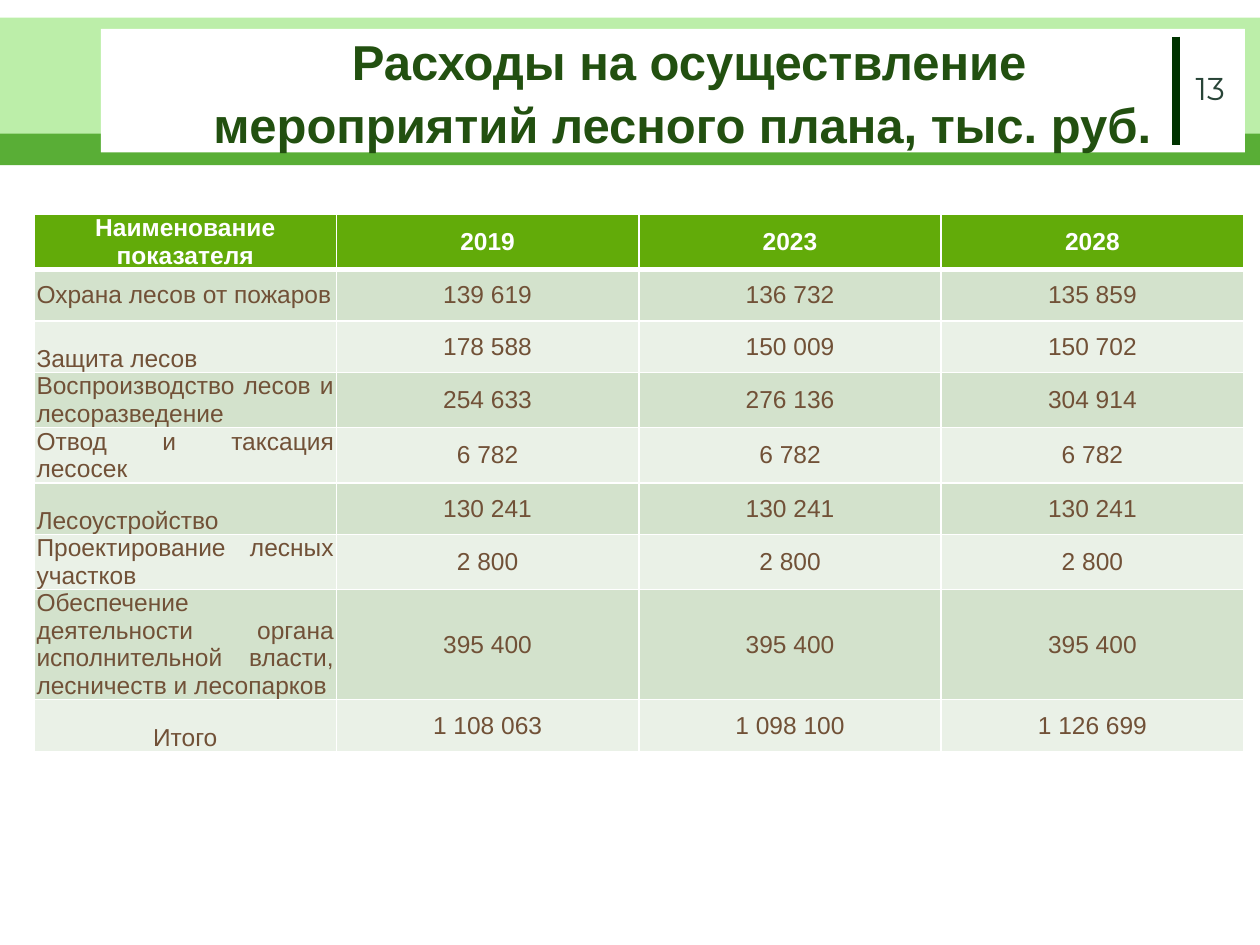
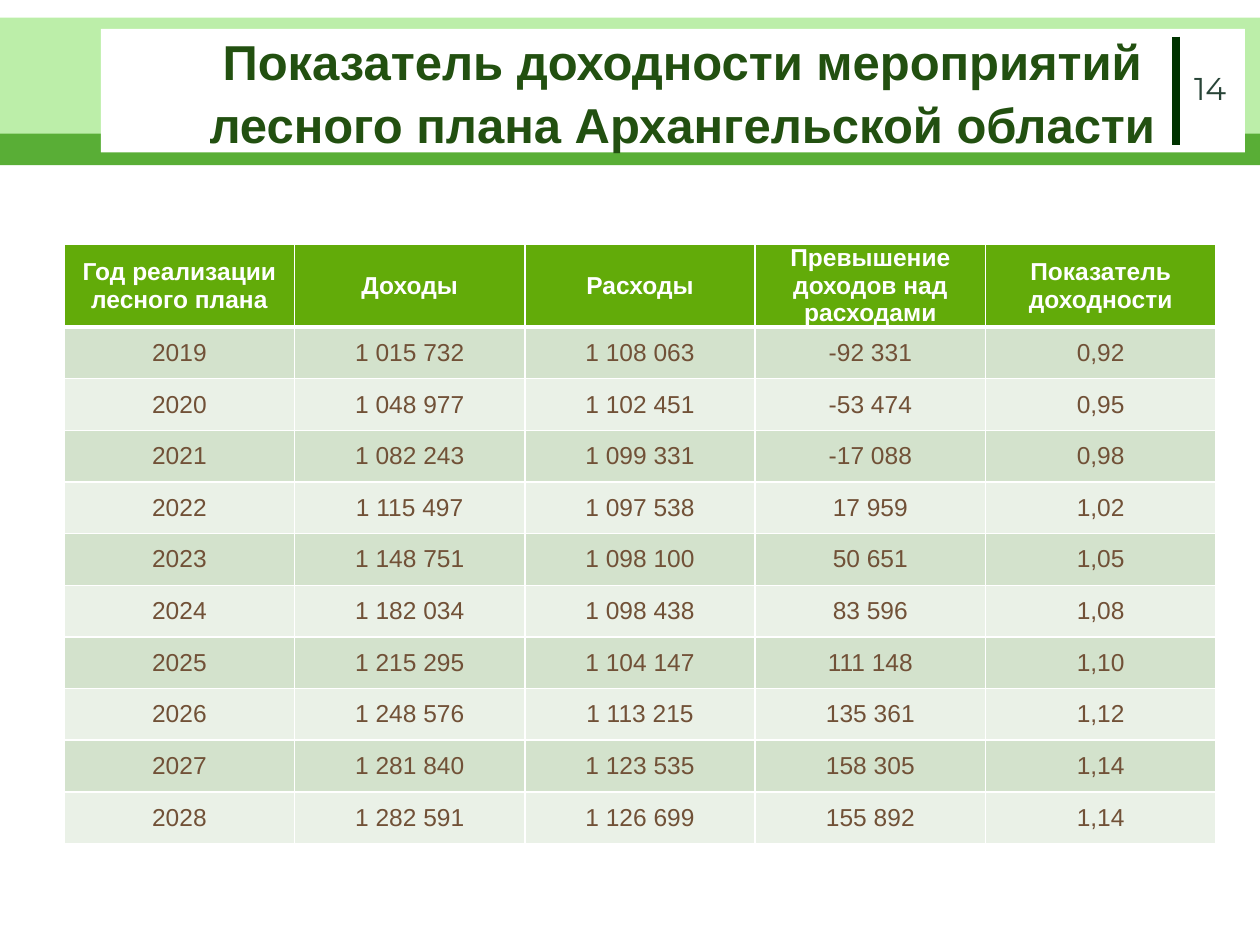
import pptx
import pptx.util
import pptx.dml.color
import pptx.enum.shapes
import pptx.enum.text
import pptx.oxml
import pptx.oxml.ns
import lxml.etree

Inches = pptx.util.Inches
Pt = pptx.util.Pt
RGBColor = pptx.dml.color.RGBColor
ALIGN = pptx.enum.text.PP_ALIGN
ANCHOR = pptx.enum.text.MSO_ANCHOR
qn = pptx.oxml.ns.qn

WHITE = RGBColor(0xFF, 0xFF, 0xFF)
BAND_DARK = RGBColor(0x47, 0xA6, 0x21)
BAND_LIGHT = RGBColor(0xBC, 0xEE, 0xA9)
DIVIDER = RGBColor(0x00, 0x33, 0x00)
TITLE_GREEN = RGBColor(0x22, 0x50, 0x10)
NUMBER_GREEN = RGBColor(0x28, 0x44, 0x37)
HEADER_GREEN = RGBColor(0x62, 0xAB, 0x09)
ROW_DARK = RGBColor(0xD3, 0xE2, 0xCC)
ROW_LIGHT = RGBColor(0xEA, 0xF1, 0xE7)
BROWN = RGBColor(0x71, 0x51, 0x37)

ROW_HEIGHT = 0.41

expenses = [
    ["Наименование показателя", "2019", "2023", "2028"],
    ["Охрана лесов от пожаров", "139 619", "136 732", "135 859"],
    ["Защита лесов", "178 588", "150 009", "150 702"],
    ["Воспроизводство лесов и лесоразведение", "254 633", "276 136", "304 914"],
    ["Отвод и таксация лесосек", "6 782", "6 782", "6 782"],
    ["Лесоустройство", "130 241", "130 241", "130 241"],
    ["Проектирование лесных участков", "2 800", "2 800", "2 800"],
    ["Обеспечение деятельности органа исполнительной власти, лесничеств и лесопарков",
     "395 400", "395 400", "395 400"],
    ["Итого", "1 108 063", "1 098 100", "1 126 699"],
]
profitability = [
    ["Год реализации\vлесного плана", "Доходы", "Расходы",
     "Превышение доходов над расходами", "Показатель\vдоходности"],
    ["2019", "1 015 732", "1 108 063", "-92 331", "0,92"],
    ["2020", "1 048 977", "1 102 451", "-53 474", "0,95"],
    ["2021", "1 082 243", "1 099 331", "-17 088", "0,98"],
    ["2022", "1 115 497", "1 097 538", "17 959", "1,02"],
    ["2023", "1 148 751", "1 098 100", "50 651", "1,05"],
    ["2024", "1 182 034", "1 098 438", "83 596", "1,08"],
    ["2025", "1 215 295", "1 104 147", "111 148", "1,10"],
    ["2026", "1 248 576", "1 113 215", "135 361", "1,12"],
    ["2027", "1 281 840", "1 123 535", "158 305", "1,14"],
    ["2028", "1 282 591", "1 126 699", "155 892", "1,14"],
]
slides = [
    (" Расходы на осуществление мероприятий лесного плана, тыс. руб.",
     "13", expenses, 0.27, 1.7, 9.6, 0.02),
    ("Показатель доходности мероприятий лесного плана Архангельской области",
     "14", profitability, 0.51, 1.94, 9.14, 0.07),
]


def style_text(para, font_name, size, color, bold=False, align=ALIGN.CENTER):
    para.alignment = align
    para.font.name = font_name
    para.font.size = Pt(size)
    para.font.bold = bold
    para.font.color.rgb = color


def add_border(cell, side, width):
    line = lxml.etree.SubElement(cell._tc.get_or_add_tcPr(), qn("a:" + side), w=str(Pt(width)))
    fill = lxml.etree.SubElement(line, qn("a:solidFill"))
    lxml.etree.SubElement(fill, qn("a:srgbClr"), val=str(WHITE))


deck = pptx.Presentation()
deck.slide_width = Inches(10)
deck.slide_height = Inches(7.5)
layout = deck.slide_layouts[5]
pages = [deck.slides.add_slide(layout) for slide in slides]

frame_parts = []
for left, top, width, height, color in [
    (0, 0.89, 10, 0.42, BAND_DARK),
    (0, 0.14, 10, 0.92, BAND_LIGHT),
    (0.8, 0.23, 9.08, 0.98, WHITE),
]:
    band = pages[0].shapes.add_shape(
        pptx.enum.shapes.MSO_SHAPE.RECTANGLE,
        Inches(left), Inches(top), Inches(width), Inches(height))
    band.shadow.inherit = False
    band.fill.solid()
    band.fill.fore_color.rgb = color
    band.line.fill.background()
    if color == BAND_DARK:
        tint = band.element.spPr.find(qn("a:solidFill"))[0]
        lxml.etree.SubElement(tint, qn("a:alpha"), val="90000")
    frame_parts.append(band.element)

divider = pages[0].shapes.add_connector(
    pptx.enum.shapes.MSO_CONNECTOR.STRAIGHT,
    Inches(9.33), Inches(0.29), Inches(9.33), Inches(1.15))
divider.line.color.rgb = DIVIDER
divider.line.width = Pt(4.5)
lxml.etree.SubElement(divider.element.spPr, qn("a:effectLst"))
frame_parts.append(divider.element)

for position, part in enumerate(frame_parts, start=2):
    layout.shapes.element.insert(position, part)

for page, (heading, number, rows, left, top, width, margin) in zip(pages, slides):
    title = page.shapes.title
    title.left, title.top = Inches(1.5), Inches(0.21)
    title.width, title.height = Inches(7.83), Inches(1.02)
    title.text_frame.text = heading
    title.text_frame.word_wrap = True
    title.text_frame.auto_size = pptx.enum.text.MSO_AUTO_SIZE.NONE
    title.text_frame.vertical_anchor = ANCHOR.MIDDLE
    title_para = title.text_frame.paragraphs[0]
    style_text(title_para, "Arial", 28, TITLE_GREEN, bold=True)
    title_para.line_spacing = 1.07

    table = page.shapes.add_table(
        len(rows), len(rows[0]), Inches(left), Inches(top),
        Inches(width), Inches(ROW_HEIGHT * len(rows))).table
    for row in table.rows:
        row.height = Inches(ROW_HEIGHT)

    for row_index, values in enumerate(rows):
        is_header = row_index == 0
        for column_index, value in enumerate(values):
            cell = table.cell(row_index, column_index)
            cell.text = value
            cell.margin_left = cell.margin_right = Inches(margin)
            cell.margin_top = cell.margin_bottom = 0
            cell.vertical_anchor = ANCHOR.MIDDLE
            align = ALIGN.CENTER
            if rows is expenses and column_index == 0 and not is_header:
                if row_index > 1:
                    cell.vertical_anchor = ANCHOR.BOTTOM
                if value != "Итого":
                    align = ALIGN.JUSTIFY
            style_text(cell.text_frame.paragraphs[0], "Arial", 14,
                       WHITE if is_header else BROWN, is_header, align)
            add_border(cell, "lnL", 1)
            add_border(cell, "lnR", 1)
            add_border(cell, "lnT", 3 if row_index == 1 else 1)
            add_border(cell, "lnB", 3 if is_header else 1)
            cell.fill.solid()
            if is_header:
                cell.fill.fore_color.rgb = HEADER_GREEN
            else:
                cell.fill.fore_color.rgb = ROW_DARK if row_index % 2 else ROW_LIGHT

    number_box = page.shapes.add_textbox(Inches(9.33), Inches(0.44), Inches(0.55), Inches(0.52))
    number_box.text_frame.word_wrap = True
    number_box.text_frame.vertical_anchor = ANCHOR.MIDDLE
    number_box.text_frame.text = number
    style_text(number_box.text_frame.paragraphs[0], "Montserrat", 18, NUMBER_GREEN)

deck.save("out.pptx")
